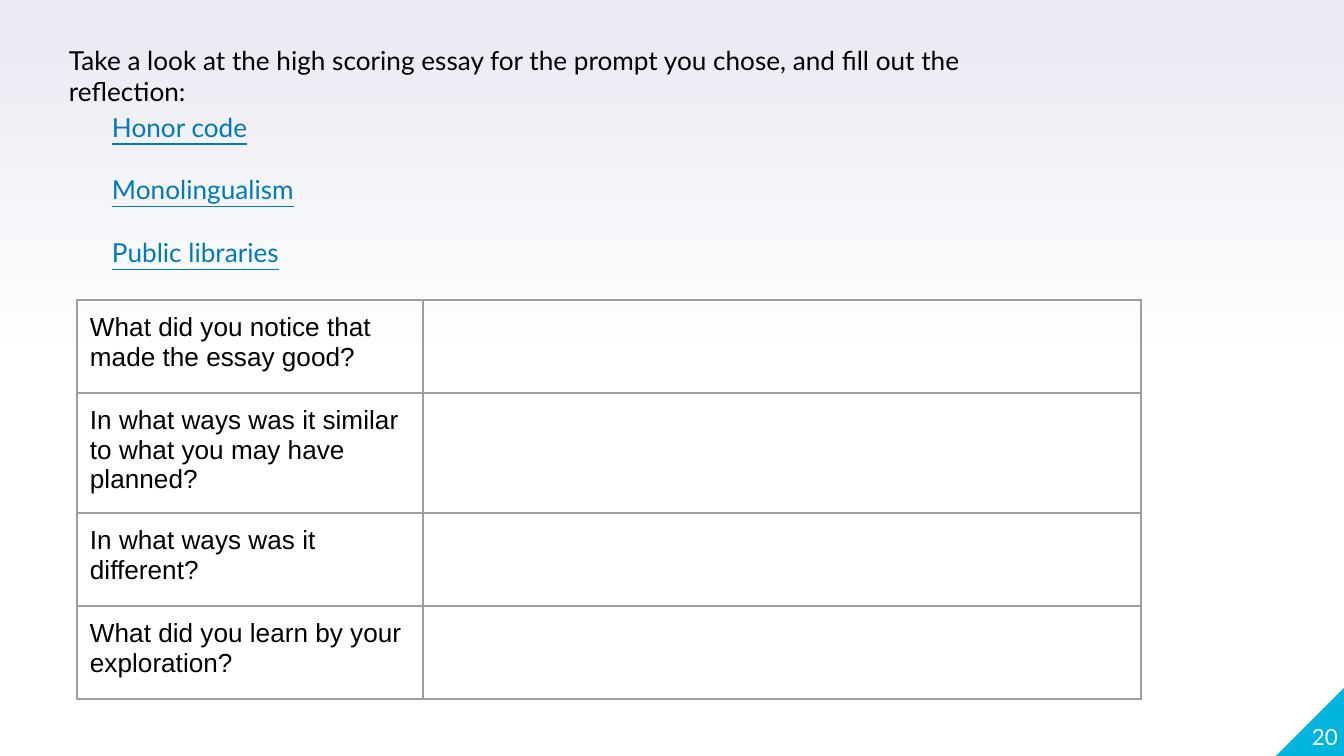
from copy import deepcopy

from lxml import etree
from pptx import Presentation
from pptx import util as u
from pptx.dml import color
from pptx.enum import shapes, text
from pptx.oxml import ns

QUESTIONS = [
    "What did you notice that made the essay good?",
    "In what ways was it similar to what you may have planned?",
    "In what ways was it different?",
    "What did you learn by your exploration?",
]
ESSAYS = ["Honor code", "Monolingualism", "Public libraries"]


def px(length):
    return u.Emu(round(length * 914400 / 134.4))


def rgb(value):
    return color.RGBColor.from_string(value)


class ReflectionSlide:
    font = "Lato"
    table_font = "Arial"
    black = "000000"
    white = "FFFFFF"
    link = "007BB9"
    accent = "00B5DD"
    haze = "E9EAF2"
    border = "9E9E9E"
    size = 14
    inset = 13

    def __init__(self, presentation):
        self.slide = presentation.slides.add_slide(presentation.slide_layouts[6])

    def background(self):
        fill = self.slide.background.fill
        fill.gradient()
        fill.gradient_angle = 90
        first, last = fill.gradient_stops
        first.color.rgb, last.color.rgb = rgb(self.white), rgb(self.haze)
        stops = self.slide.element.find(".//" + ns.qn("a:gsLst"))
        middle = deepcopy(stops[0])
        middle.set("pos", "50000")
        stops.insert(1, middle)

    def corner(self, left, top, side):
        shape = self.slide.shapes.add_shape(
            shapes.MSO_SHAPE.RIGHT_TRIANGLE, px(left), px(top), px(side), px(side))
        shape.shadow.inherit = False
        shape.fill.solid()
        shape.fill.fore_color.rgb = rgb(self.accent)
        shape.line.fill.background()
        shape.element.spPr.get_or_add_xfrm().set("flipH", "1")

    def run(self, paragraph, words, ink, font=None, size=None, underline=None):
        run = paragraph.add_run()
        run.text = words
        run.font.name = font or self.font
        run.font.size = u.Pt(size or self.size)
        run.font.color.rgb = rgb(ink)
        run.font.underline = underline

    def margins(self, holder, inset):
        for side in ("left", "top", "right", "bottom"):
            setattr(holder, f"margin_{side}", px(inset))

    def text_box(self, box, lines, ink, size=None, underline=None, gap=0, inset=inset,
                 align=text.PP_ALIGN.LEFT, anchor=text.MSO_ANCHOR.TOP):
        frame = self.slide.shapes.add_textbox(*map(px, box)).text_frame
        frame.word_wrap = True
        frame.vertical_anchor = anchor
        self.margins(frame, inset)
        for index, words in enumerate(lines):
            paragraph = frame.add_paragraph() if index else frame.paragraphs[0]
            paragraph.alignment = align
            paragraph.space_before = u.Pt(gap if index else 0)
            self.run(paragraph, words, ink, size=size, underline=underline)

    def cell_border(self, cell):
        properties = cell._tc.get_or_add_tcPr()
        for index, side in enumerate(("lnL", "lnR", "lnT", "lnB")):
            line = etree.Element(ns.qn(f"a:{side}"), w=str(u.Pt(0.75)))
            fill = etree.SubElement(line, ns.qn("a:solidFill"))
            etree.SubElement(fill, ns.qn("a:srgbClr"), val=self.border)
            properties.insert(index, line)

    def question_table(self, left, top, widths, heights, questions):
        table = self.slide.shapes.add_table(
            len(heights), len(widths), px(left), px(top),
            px(sum(widths)), px(sum(heights))).table
        table.first_row = table.horz_banding = False
        for column, width in zip(table.columns, widths):
            column.width = px(width)
        for row, height, question in zip(table.rows, heights, questions):
            row.height = px(height)
            self.run(row.cells[0].text_frame.paragraphs[0], question,
                     self.black, font=self.table_font)
            for cell in row.cells:
                self.margins(cell, self.inset)
                cell.fill.background()
                self.cell_border(cell)


def main():
    presentation = Presentation()
    presentation.slide_width, presentation.slide_height = px(1344), px(756)
    page = ReflectionSlide(presentation)
    page.background()
    page.corner(1276, 688, 68)
    page.text_box((1271, 681, 67, 69), ["20"], page.white, size=12, inset=0,
                  align=text.PP_ALIGN.RIGHT, anchor=text.MSO_ANCHOR.BOTTOM)
    page.text_box((56, 31, 1025, 69),
                  ["Take a look at the high scoring essay for the prompt you chose, "
                   "and fill out the reflection:"], page.black)
    page.text_box((99, 98, 405, 239), ESSAYS, page.link, underline=True, gap=16.8)
    page.question_table(77, 300, [346, 718], [93, 115, 93, 93], QUESTIONS)
    presentation.save("out.pptx")


if __name__ == "__main__":
    main()
